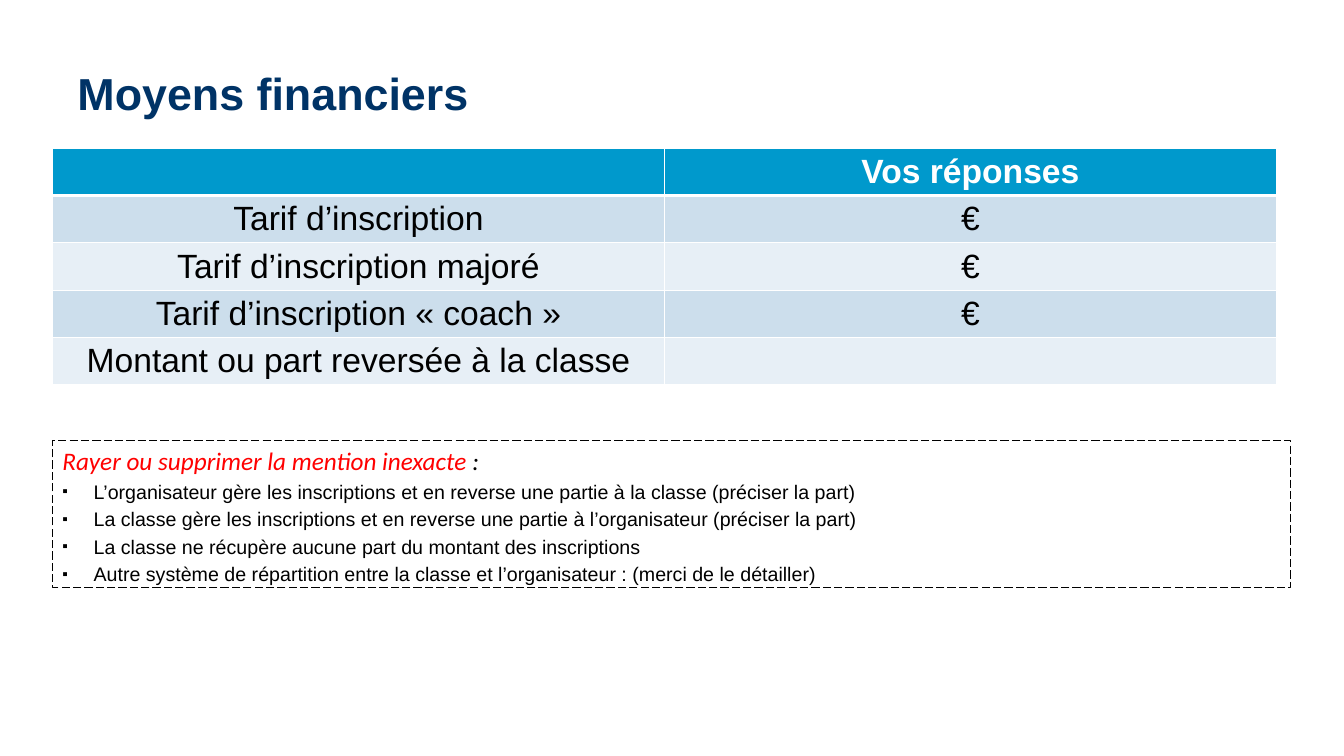
from lxml import etree
from pptx import Presentation
from pptx.dml.color import RGBColor
from pptx.enum.dml import MSO_LINE
from pptx.enum.shapes import MSO_SHAPE
from pptx.enum.text import MSO_ANCHOR, PP_ALIGN
from pptx.oxml.ns import qn
from pptx.util import Inches, Pt

RECT, DASH = MSO_SHAPE.RECTANGLE, MSO_LINE.LONG_DASH
TOP, MIDDLE = MSO_ANCHOR.TOP, MSO_ANCHOR.MIDDLE
LEFT, CENTER = PP_ALIGN.LEFT, PP_ALIGN.CENTER

# Content
TITLE = "Moyens financiers"
ROWS = [
    ("", "Vos réponses"),
    ("Tarif d’inscription", "€"),
    ("Tarif d’inscription majoré", "€"),
    ("Tarif d’inscription « coach »", "€"),
    ("Montant ou part reversée à la classe", ""),
]
INSTRUCTION = "Rayer ou supprimer la mention inexacte "
OPTIONS = [
    "L’organisateur gère les inscriptions et en reverse une partie à la classe (préciser la part)",
    "La classe gère les inscriptions et en reverse une partie à l’organisateur (préciser la part)",
    "La classe ne récupère aucune part du montant des inscriptions",
    "Autre système de répartition entre la classe et l’organisateur : (merci de le détailler)",
]

# Formats
COLORS = {"navy": "003366", "header": "0099CC", "odd": "CCDEEC", "even": "E7EFF6",
          "white": "FFFFFF", "black": "000000", "red": "FF0000"}
TITLE_FONT = {"name": "Arial", "size": Pt(32), "bold": True}
HEADER_FONT = {"name": "Arial", "size": Pt(24), "bold": True}
CELL_FONT = {"name": "Arial", "size": Pt(24), "bold": False}
INSTRUCTION_FONT = {"name": "Calibri", "size": Pt(18), "italic": True}
OPTION_FONT = {"name": "Arial", "size": Pt(14)}
MARGIN, COL_W, ROW_H = 0.52, 6.07, 0.47
BULLET_INDENT = Inches(0.31)


def rgb(name):
    return RGBColor.from_string(COLORS[name])


def add_run(p, text, color, font):
    r = p.add_run()
    r.text = text
    for key, value in font.items():
        setattr(r.font, key, value)
    r.font.color.rgb = rgb(color)


def add_bullet(p):
    pPr = p._p.get_or_add_pPr()
    pPr.set("marL", str(BULLET_INDENT))
    pPr.set("indent", str(-BULLET_INDENT))
    etree.SubElement(pPr, qn("a:buSzPct"), val="80000")
    etree.SubElement(pPr, qn("a:buFont"), typeface="Arial")
    etree.SubElement(pPr, qn("a:buChar"), char="▪")


def set_borders(cell, bottom):
    tcPr = cell._tc.get_or_add_tcPr()
    for i, (side, width) in enumerate([("L", 1), ("R", 1), ("T", 1), ("B", bottom)]):
        ln = etree.Element(qn("a:ln" + side), w=str(Pt(width)))
        fill = etree.SubElement(ln, qn("a:solidFill"))
        etree.SubElement(fill, qn("a:srgbClr"), val=COLORS["white"])
        tcPr.insert(i, ln)


prs = Presentation()
prs.slide_width, prs.slide_height = Inches(13.33), Inches(7.5)
s = prs.slides.add_slide(prs.slide_layouts[6])

# Title
tf = s.shapes.add_textbox(Inches(0.67), Inches(0.56), Inches(12), Inches(0.71)).text_frame
tf.word_wrap = True
tf.vertical_anchor = MIDDLE
add_run(tf.paragraphs[0], TITLE, "navy", TITLE_FONT)

# Price table
table = s.shapes.add_table(len(ROWS), 2, Inches(MARGIN), Inches(1.47),
                           Inches(2 * COL_W), Inches(len(ROWS) * ROW_H)).table
for col in table.columns:
    col.width = Inches(COL_W)
for i, row in enumerate(ROWS):
    table.rows[i].height = Inches(ROW_H)
    band = "header" if i == 0 else "odd" if i % 2 else "even"
    for j, text in enumerate(row):
        cell = table.cell(i, j)
        cell.fill.solid()
        cell.fill.fore_color.rgb = rgb(band)
        cell.margin_top = cell.margin_bottom = Inches(0.02)
        cell.vertical_anchor = MIDDLE
        set_borders(cell, 1 if i else 3)
        p = cell.text_frame.paragraphs[0]
        p.alignment = CENTER
        if text:
            add_run(p, text, "black" if i else "white", CELL_FONT if i else HEADER_FONT)

# Dashed box of options
box = s.shapes.add_shape(RECT, Inches(MARGIN), Inches(4.37), Inches(12.28), Inches(1.46))
box.shadow.inherit = False
box.fill.background()
box.line.color.rgb = rgb("black")
box.line.width = Pt(0.75)
box.line.dash_style = DASH
tf = box.text_frame
tf.word_wrap = True
tf.vertical_anchor = TOP
tf.margin_top, tf.margin_bottom = Inches(0.05), Inches(0.02)
p = tf.paragraphs[0]
p.alignment = LEFT
add_run(p, INSTRUCTION, "red", INSTRUCTION_FONT)
add_run(p, ":", "black", INSTRUCTION_FONT)
for option in OPTIONS:
    p = tf.add_paragraph()
    p.alignment = LEFT
    p.space_before = Pt(2.8)
    add_bullet(p)
    add_run(p, option, "black", OPTION_FONT)

prs.save("out.pptx")
